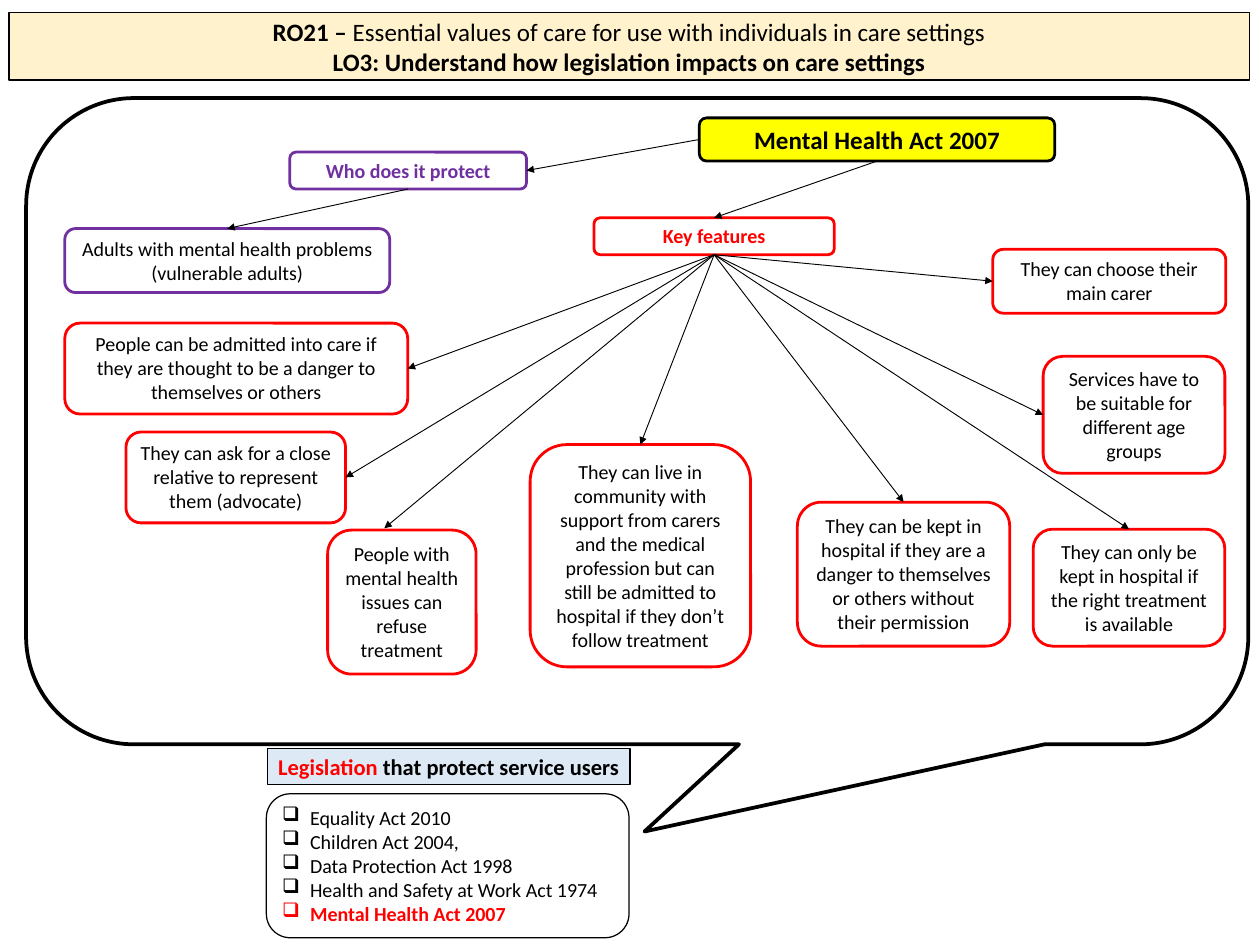
from lxml import etree
from pptx import Presentation
from pptx import util as u
from pptx.dml.color import RGBColor
from pptx.enum import shapes, text
from pptx.oxml import ns

FONT = "Calibri"
COLORS = {
    "black": "000000", "white": "FFFFFF", "red": "FF0000", "purple": "7030A0",
    "yellow": "FFFF00", "cream": "FFF2CC", "pale_blue": "DDEAF6",
}
TOP, LEFT, BOTTOM, RIGHT = range(4)
ROUND = shapes.MSO_SHAPE.ROUNDED_RECTANGLE

LAWS = [
    "Equality Act 2010", "Children Act 2004,", "Data Protection Act 1998",
    "Health and Safety at Work Act 1974", "Mental Health Act 2007",
]
FEATURES = [
    ("People can be admitted into care if they are thought to be a danger to themselves or others",
     (0.43, 2.5, 3.81, 1.01), RIGHT),
    ("They can ask for a close relative to represent them (advocate)",
     (1.11, 3.71, 2.44, 1.01), RIGHT),
    ("People with mental health issues can refuse treatment",
     (3.35, 4.8, 1.65, 1.6), None),
    ("They can live in community with support from carers and the medical profession "
     "but can still be admitted to hospital if they don’t follow treatment",
     (5.6, 3.85, 2.45, 2.47), TOP),
    ("They can be kept in hospital if they are a danger to themselves or others "
     "without their permission",
     (8.57, 4.49, 2.36, 1.6), TOP),
    ("They can only be kept in hospital if the right treatment is available",
     (11.19, 4.79, 2.13, 1.3), TOP),
    ("Services have to be suitable for different age groups",
     (11.3, 2.87, 2.02, 1.3), LEFT),
    ("They can choose their main carer",
     (10.74, 1.68, 2.59, 0.71), LEFT),
]
REFUSAL_TIP = (3.98, 4.78)


def rgb(name):
    return RGBColor.from_string(COLORS[name])


def paint(shape, fill, line, width):
    if fill:
        shape.fill.solid()
        shape.fill.fore_color.rgb = rgb(fill)
    else:
        shape.fill.background()
    shape.line.color.rgb = rgb(line)
    shape.line.width = u.Pt(width)


def style(font, size, color="black", bold=False):
    font.name = FONT
    font.size = u.Pt(size)
    font.bold = bold
    font.color.rgb = rgb(color)


def add_box(slide, kind, box, fill, line, width):
    shape = slide.shapes.add_shape(kind, *map(u.Inches, box))
    shape.shadow.inherit = False
    paint(shape, fill, line, width)
    frame = shape.text_frame
    frame.word_wrap = True
    frame.vertical_anchor = text.MSO_ANCHOR.TOP
    return shape


def add_label(slide, box, words, line, fill=None, size=16, color="black", bold=False):
    label = add_box(slide, ROUND, box, fill, line, 2.25)
    label.text_frame.auto_size = text.MSO_AUTO_SIZE.SHAPE_TO_FIT_TEXT
    paragraph = label.text_frame.paragraphs[0]
    paragraph.text = words
    paragraph.alignment = text.PP_ALIGN.CENTER
    style(paragraph.font, size, color, bold)
    return label


def add_arrow(slide, source, source_side, target=None, target_side=None, tip=(0, 0)):
    arrow = slide.shapes.add_connector(
        shapes.MSO_CONNECTOR.STRAIGHT, 0, 0, *map(u.Inches, tip))
    arrow.begin_connect(source, source_side)
    if target is not None:
        arrow.end_connect(target, target_side)
    arrow.line.color.rgb = rgb("black")
    arrow.line.width = u.Pt(0.75)
    outline = arrow.line._get_or_add_ln()
    etree.SubElement(outline, ns.qn("a:tailEnd"), type="triangle")
    etree.SubElement(arrow._element.spPr, ns.qn("a:effectLst"))


def add_bullet(paragraph, color):
    props = paragraph._p.get_or_add_pPr()
    indent = u.Inches(0.31)
    props.set("marL", str(indent))
    props.set("indent", str(-indent))
    bullet_color = etree.SubElement(props, ns.qn("a:buClr"))
    etree.SubElement(bullet_color, ns.qn("a:srgbClr"), val=COLORS[color])
    etree.SubElement(props, ns.qn("a:buChar"), char="❑")


def build_banner(slide, box):
    banner = slide.shapes.title
    banner.left, banner.top, banner.width, banner.height = map(u.Inches, box)
    paint(banner, "cream", "black", 1)
    frame = banner.text_frame
    frame.word_wrap = True
    frame.auto_size = text.MSO_AUTO_SIZE.NONE
    frame.vertical_anchor = text.MSO_ANCHOR.MIDDLE
    unit = frame.paragraphs[0]
    for words, bold in (
        ("RO21 – ", True),
        ("Essential values of care for use with individuals in care settings", False),
    ):
        run = unit.add_run()
        run.text = words
        style(run.font, 20, bold=bold)
    outcome = frame.add_paragraph()
    outcome.text = "LO3: Understand how legislation impacts on care settings"
    style(outcome.font, 20, bold=True)
    for paragraph in frame.paragraphs:
        paragraph.alignment = text.PP_ALIGN.CENTER


def build_legislation(slide, box):
    left, top, width, height = box
    heading = add_box(slide, shapes.MSO_SHAPE.RECTANGLE,
                      (left + 0.01, top, width, 0.4), "pale_blue", "black", 1)
    paragraph = heading.text_frame.paragraphs[0]
    paragraph.alignment = text.PP_ALIGN.CENTER
    for words, color in (("Legislation ", "red"), ("that protect service users", "black")):
        run = paragraph.add_run()
        run.text = words
        style(run.font, 18, color, True)

    acts = add_box(slide, ROUND, (left, top + 0.5, width, height - 0.5), "white", "black", 1)
    frame = acts.text_frame
    for index, law in enumerate(LAWS):
        paragraph = frame.add_paragraph() if index else frame.paragraphs[0]
        paragraph.text = law
        paragraph.alignment = text.PP_ALIGN.LEFT
        current = law == LAWS[-1]
        color = "red" if current else "black"
        style(paragraph.font, 16, color, current)
        add_bullet(paragraph, color)


def build_act_map(slide, box):
    left, top = box[:2]

    def place(x, y, width, height):
        return left + x, top + y, width, height

    callout = add_box(slide, shapes.MSO_SHAPE.ROUNDED_RECTANGULAR_CALLOUT,
                      box, None, "black", 3)
    callout.adjustments[0] = 0.006
    callout.adjustments[1] = 0.635

    act = add_label(slide, place(7.48, 0.22, 3.95, 0.48), "Mental Health Act 2007",
                    "black", "yellow", 20, bold=True)
    key = add_label(slide, place(6.31, 1.33, 2.67, 0.41), "Key features",
                    "red", "white", color="red", bold=True)
    who = add_label(slide, place(2.93, 0.6, 2.63, 0.41), "Who does it protect",
                    "purple", "white", color="purple", bold=True)
    adults = add_label(slide, place(0.43, 1.45, 3.61, 0.71),
                       "Adults with mental health problems (vulnerable adults)", "purple")
    add_arrow(slide, who, BOTTOM, adults, TOP)
    add_arrow(slide, act, LEFT, who, RIGHT)
    add_arrow(slide, act, BOTTOM, key, TOP)

    for words, spot, side in FEATURES:
        feature = add_label(slide, place(*spot), words, "red")
        if side is None:
            tip = left + REFUSAL_TIP[0], top + REFUSAL_TIP[1]
            add_arrow(slide, key, BOTTOM, tip=tip)
        else:
            add_arrow(slide, key, BOTTOM, feature, side)


def main():
    deck = Presentation()
    deck.slide_width = u.Inches(14)
    deck.slide_height = u.Inches(10.5)
    slide = deck.slides.add_slide(deck.slide_layouts[5])
    build_banner(slide, (0.1, 0.14, 13.78, 0.75))
    build_legislation(slide, (2.96, 8.32, 4.03, 2.1))
    build_act_map(slide, (0.29, 1.09, 13.58, 7.18))
    deck.save("out.pptx")


if __name__ == "__main__":
    main()
